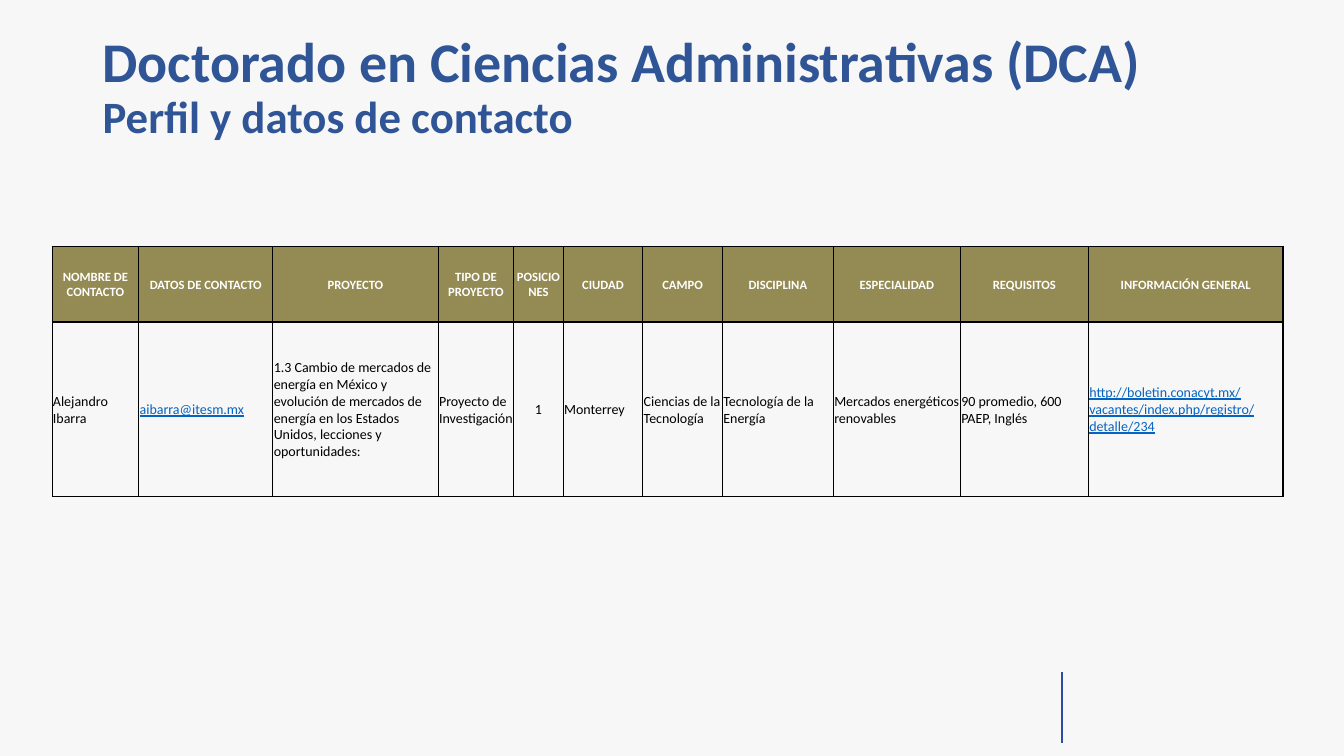
from dataclasses import dataclass

from lxml import etree
from pptx import Presentation, util as u
from pptx.dml.color import RGBColor
from pptx.enum import shapes, text
from pptx.oxml import ns


@dataclass(frozen=True)
class Theme:
    font: str = "Calibri"
    background: str = "F7F7F7"
    title: str = "2F5597"
    accent: str = "2D4BA0"
    header_fill: str = "948A54"
    header_text: str = "FFFFFF"
    body_text: str = "000000"
    link: str = "0563C1"
    border: str = "000000"
    title_size: int = 40
    subtitle_size: int = 32
    header_size: int = 9
    body_size: int = 10


THEME = Theme()
WIDTH, HEIGHT = 13.33, 7.5
ROW_HEIGHTS = (0.75, 1.73)

# Heading, value and relative width of each column
COLUMNS = (
    ("NOMBRE DE CONTACTO", "Alejandro Ibarra", 0.86),
    ("DATOS DE CONTACTO", "aibarra@itesm.mx", 1.33),
    ("PROYECTO", "1.3 Cambio de mercados de energía en México y evolución de "
     "mercados de energía en los Estados Unidos, lecciones y oportunidades:", 1.64),
    ("TIPO DE PROYECTO", "Proyecto de Investigación", 0.75),
    ("POSICIONES", "1", 0.49),
    ("CIUDAD", "Monterrey", 0.79),
    ("CAMPO", "Ciencias de la Tecnología", 0.79),
    ("DISCIPLINA", "Tecnología de la Energía", 1.1),
    ("ESPECIALIDAD", "Mercados energéticos renovables", 1.26),
    ("REQUISITOS", "90 promedio, 600 PAEP, Inglés", 1.27),
    ("INFORMACIÓN GENERAL",
     "http://boletin.conacyt.mx/vacantes/index.php/registro/detalle/234", 1.93),
)
LINK_COLUMNS = ("DATOS DE CONTACTO", "INFORMACIÓN GENERAL")
CENTRED_COLUMNS = ("POSICIONES",)


def across(percent):
    return u.Inches(WIDTH * percent / 100)


def down(percent):
    return u.Inches(HEIGHT * percent / 100)


def set_attributes(target, values):
    for name, value in values.items():
        setattr(target, name, value)


def write(paragraph, content, size, color, **font_values):
    run = paragraph.add_run()
    run.text = content
    set_attributes(run.font, {"name": THEME.font, "size": u.Pt(size), **font_values})
    run.font.color.rgb = RGBColor.from_string(color)


def add_title(slide, lines):
    box = slide.shapes.add_textbox(across(6.9), down(4.4), across(86.3), down(14.7))
    frame = box.text_frame
    set_attributes(frame, {"word_wrap": True, "vertical_anchor": text.MSO_ANCHOR.MIDDLE})
    for index, (content, size) in enumerate(lines):
        paragraph = frame.add_paragraph() if index else frame.paragraphs[0]
        paragraph.line_spacing = 0.9
        write(paragraph, content, size, THEME.title, bold=True)


def add_rule(slide, x, top, bottom):
    rule = slide.shapes.add_connector(
        shapes.MSO_CONNECTOR.STRAIGHT, across(x), down(top), across(x), down(bottom))
    rule.line.width = u.Pt(1.5)
    rule.line.color.rgb = RGBColor.from_string(THEME.accent)
    etree.SubElement(rule._element.spPr, ns.qn("a:effectLst"))


def add_borders(cell, widths):
    properties = cell._tc.get_or_add_tcPr()
    for side, points in widths.items():
        line = etree.SubElement(properties, ns.qn(f"a:ln{side}"), w=str(u.Pt(points)))
        fill = etree.SubElement(line, ns.qn("a:solidFill"))
        etree.SubElement(fill, ns.qn("a:srgbClr"), val=THEME.border)


def format_cell(cell, fill, is_last):
    set_attributes(cell, {
        "margin_left": u.Inches(0.01), "margin_right": u.Inches(0.01),
        "margin_top": u.Inches(0.01), "margin_bottom": 0,
        "vertical_anchor": text.MSO_ANCHOR.MIDDLE,
    })
    add_borders(cell, {"L": 0.5, "R": 1 if is_last else 0.5, "T": 1, "B": 1})
    if fill:
        cell.fill.solid()
        cell.fill.fore_color.rgb = RGBColor.from_string(fill)
    else:
        cell.fill.background()


def add_contact_table(slide):
    width = across(91.6)
    table = slide.shapes.add_table(
        len(ROW_HEIGHTS), len(COLUMNS), across(3.87), down(32.6),
        width, u.Inches(sum(ROW_HEIGHTS))).table
    set_attributes(table, {"first_row": False, "horz_banding": False})
    for row, height in zip(table.rows, ROW_HEIGHTS):
        row.height = u.Inches(height)

    total = sum(share for _, _, share in COLUMNS)
    for index, (heading, value, share) in enumerate(COLUMNS):
        table.columns[index].width = int(width * share / total)
        is_last = index == len(COLUMNS) - 1
        header, body = table.cell(0, index), table.cell(1, index)

        # Heading cell
        format_cell(header, THEME.header_fill, is_last)
        paragraph = header.text_frame.paragraphs[0]
        paragraph.alignment = text.PP_ALIGN.CENTER
        write(paragraph, heading, THEME.header_size, THEME.header_text, bold=True)

        # Value cell
        format_cell(body, None, is_last)
        paragraph = body.text_frame.paragraphs[0]
        centred = heading in CENTRED_COLUMNS
        paragraph.alignment = text.PP_ALIGN.CENTER if centred else text.PP_ALIGN.LEFT
        is_link = heading in LINK_COLUMNS
        write(paragraph, value, THEME.body_size,
              THEME.link if is_link else THEME.body_text, bold=False, underline=is_link)


def main():
    presentation = Presentation()
    set_attributes(presentation, {"slide_width": across(100), "slide_height": down(100)})
    slide = presentation.slides.add_slide(presentation.slide_layouts[6])
    slide.background.fill.solid()
    slide.background.fill.fore_color.rgb = RGBColor.from_string(THEME.background)

    # Rule at the foot, title and table
    add_rule(slide, 79.03, 88.9, 98.3)
    add_title(slide, (
        ("Doctorado en Ciencias Administrativas (DCA)", THEME.title_size),
        ("Perfil y datos de contacto", THEME.subtitle_size),
    ))
    add_contact_table(slide)
    presentation.save("out.pptx")


if __name__ == "__main__":
    main()
